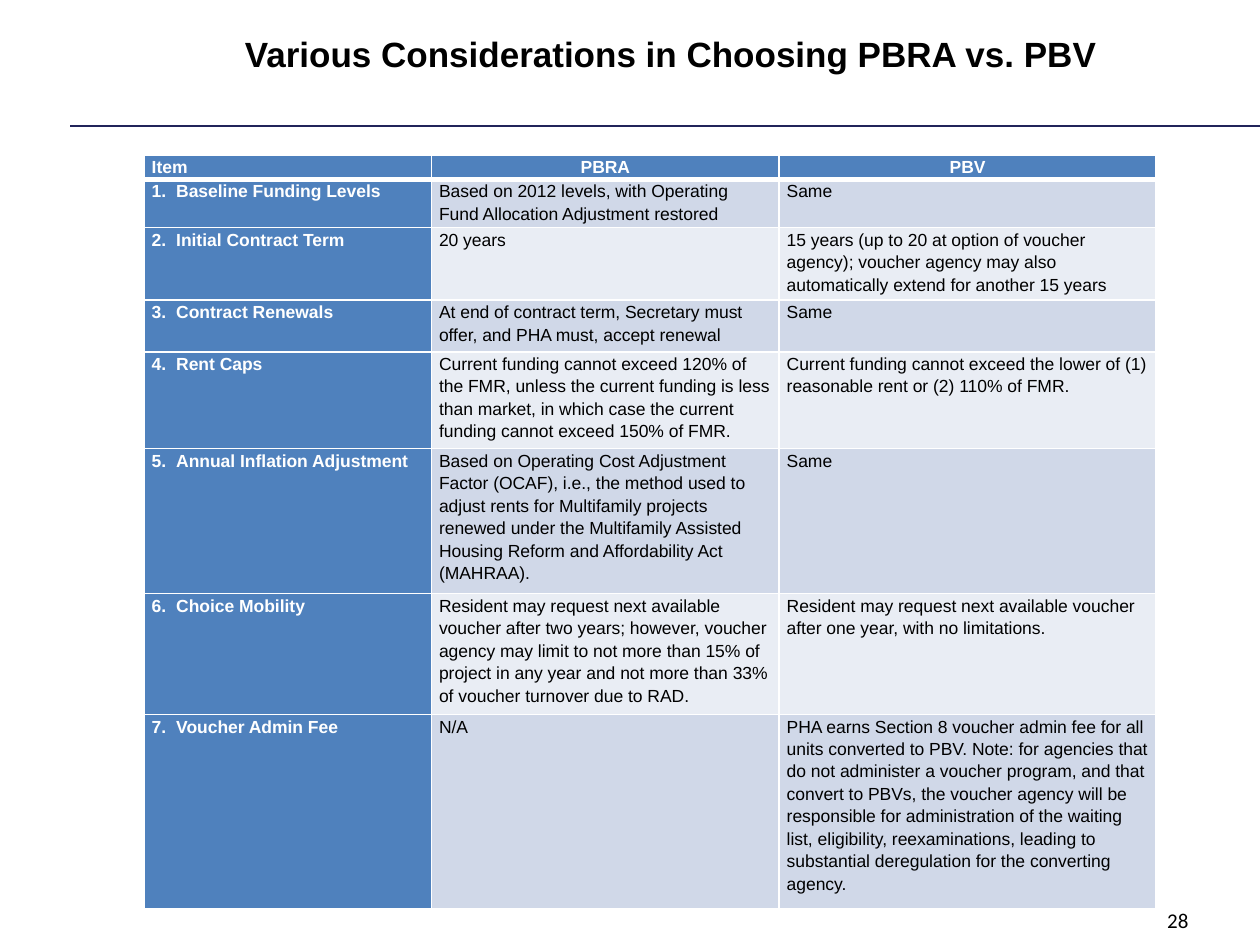
from dataclasses import dataclass

from lxml.etree import SubElement
from pptx import Presentation
from pptx.dml.color import RGBColor as RGB
from pptx.enum.shapes import MSO_CONNECTOR as Conn
from pptx.enum.text import MSO_ANCHOR as Anchor, PP_ALIGN as Align
from pptx.oxml import parse_xml
from pptx.oxml.ns import nsdecls, qn
from pptx.util import Pt


@dataclass(frozen=True)
class Theme:
    black: str = "000000"
    white: str = "FFFFFF"
    rule: str = "21245A"
    header: str = "4F81BD"
    bands: tuple = ("D0D8E8", "E9EDF4")
    font: str = "Arial"
    number_font: str = "Calibri"
    title_size: float = 20
    cell_size: float = 10
    number_size: float = 12


T = Theme()

COLS = (164.2, 198.7, 215.3)
ROW_HEIGHTS = (13, 27.4, 41, 29.5, 54.7, 69.1, 69.1, 110.9)
HEADINGS = ("Item", "PBRA", "PBV")
ITEMS = (
    ("Baseline Funding Levels",
     "Based on 2012 levels, with Operating Fund Allocation Adjustment restored",
     "Same"),
    ("Initial Contract Term",
     "20 years",
     "15 years (up to 20 at option of voucher agency); voucher agency may also "
     "automatically extend for another 15 years"),
    ("Contract Renewals",
     "At end of contract term, Secretary must offer, and PHA must, accept renewal",
     "Same"),
    ("Rent Caps",
     "Current funding cannot exceed 120% of the FMR, unless the current funding is "
     "less than market, in which case the current funding cannot exceed 150% of FMR.",
     "Current funding cannot exceed the lower of (1) reasonable rent or (2) 110% of FMR."),
    ("Annual Inflation Adjustment",
     "Based on Operating Cost Adjustment Factor (OCAF), i.e., the method used to adjust "
     "rents for Multifamily projects renewed under the Multifamily Assisted Housing "
     "Reform and Affordability Act (MAHRAA).",
     "Same"),
    ("Choice Mobility",
     "Resident may request next available voucher after two years; however, voucher "
     "agency may limit to not more than 15% of project in any year and not more than "
     "33% of voucher turnover due to RAD.",
     "Resident may request next available voucher after one year, with no limitations."),
    ("Voucher Admin Fee",
     "N/A",
     "PHA earns Section 8 voucher admin fee for all units converted to PBV. Note: for "
     "agencies that do not administer a voucher program, and that convert to PBVs, the "
     "voucher agency will be responsible for administration of the waiting list, "
     "eligibility, reexaminations, leading to substantial deregulation for the "
     "converting agency."),
)


def set_attrs(obj, values):
    for name, value in values.items():
        setattr(obj, name, value)


def write(tf, text, size, color, font=T.font, bold=False, **para):
    p = tf.paragraphs[0]
    set_attrs(p, para)
    r = p.add_run()
    r.text = text
    set_attrs(r.font, {"name": font, "size": Pt(size), "bold": bold})
    r.font.color.rgb = RGB.from_string(color)


def add_text(s, box, text, size, anchor, **fmt):
    tf = s.shapes.add_textbox(*map(Pt, box)).text_frame
    set_attrs(tf, {"word_wrap": True, "vertical_anchor": anchor})
    write(tf, text, size, T.black, **fmt)


def add_rule(s, x1, x2, y):
    line = s.shapes.add_connector(Conn.STRAIGHT, Pt(x1), Pt(y), Pt(x2), Pt(y))
    line.line.color.rgb = RGB.from_string(T.rule)
    line.line.width = Pt(0.75)
    SubElement(line._element.spPr, qn("a:effectLst"))


def set_borders(cell, **widths):
    tcPr = cell._tc.get_or_add_tcPr()
    for i, side in enumerate("LRTB"):
        tcPr.insert(i, parse_xml(
            f'<a:ln{side} {nsdecls("a")} w="{Pt(widths.get(side, 1))}"><a:solidFill>'
            f'<a:srgbClr val="{T.white}"/></a:solidFill></a:ln{side}>'))


def hang_number(cell, indent):
    pPr = cell.text_frame.paragraphs[0]._p.get_or_add_pPr()
    pPr.set("marL", str(Pt(indent)))
    pPr.set("indent", str(-Pt(indent)))


def fill_cell(cell, text, fill, strong, align=Align.LEFT):
    set_attrs(cell, {"margin_left": Pt(4.3), "margin_right": Pt(4.3),
                     "margin_top": 0, "margin_bottom": 0})
    cell.fill.solid()
    cell.fill.fore_color.rgb = RGB.from_string(fill)
    write(cell.text_frame, text, T.cell_size, T.white if strong else T.black,
          bold=strong, alignment=align, line_spacing=1.15)


def add_comparison(s, x, y):
    frame = s.shapes.add_table(len(ROW_HEIGHTS), len(COLS), Pt(x), Pt(y),
                               Pt(sum(COLS)), Pt(sum(ROW_HEIGHTS)))
    table = frame.table
    for col, width in zip(table.columns, COLS):
        col.width = Pt(width)
    for row, height in zip(table.rows, ROW_HEIGHTS):
        row.height = Pt(height)
    for c, heading in enumerate(HEADINGS):
        cell = table.cell(0, c)
        fill_cell(cell, heading, T.header, True, Align.CENTER if c else Align.LEFT)
        set_borders(cell, B=3)
    for n, (item, *options) in enumerate(ITEMS, 1):
        label = table.cell(n, 0)
        fill_cell(label, f"{n}.\t{item}", T.header, True)
        hang_number(label, 14)
        for c, option in enumerate(options, 1):
            fill_cell(table.cell(n, c), option, T.bands[(n - 1) % 2], False)
        for c in range(len(COLS)):
            set_borders(table.cell(n, c), T=3 if n == 1 else 1)


def main():
    prs = Presentation()
    set_attrs(prs, {"slide_width": Pt(720), "slide_height": Pt(540)})
    s = prs.slides.add_slide(prs.slide_layouts[6])
    add_rule(s, 40.3, 720, 72)
    add_text(s, (65.5, 15.1, 635.8, 42.5),
             "Various Considerations in Choosing PBRA vs. PBV",
             T.title_size, Anchor.TOP, bold=True, alignment=Align.CENTER)
    add_text(s, (518.4, 511.2, 167.8, 28.8), "28", T.number_size, Anchor.MIDDLE,
             font=T.number_font, alignment=Align.RIGHT)
    add_comparison(s, 82.4, 88.6)
    prs.save("out.pptx")


if __name__ == "__main__":
    main()
